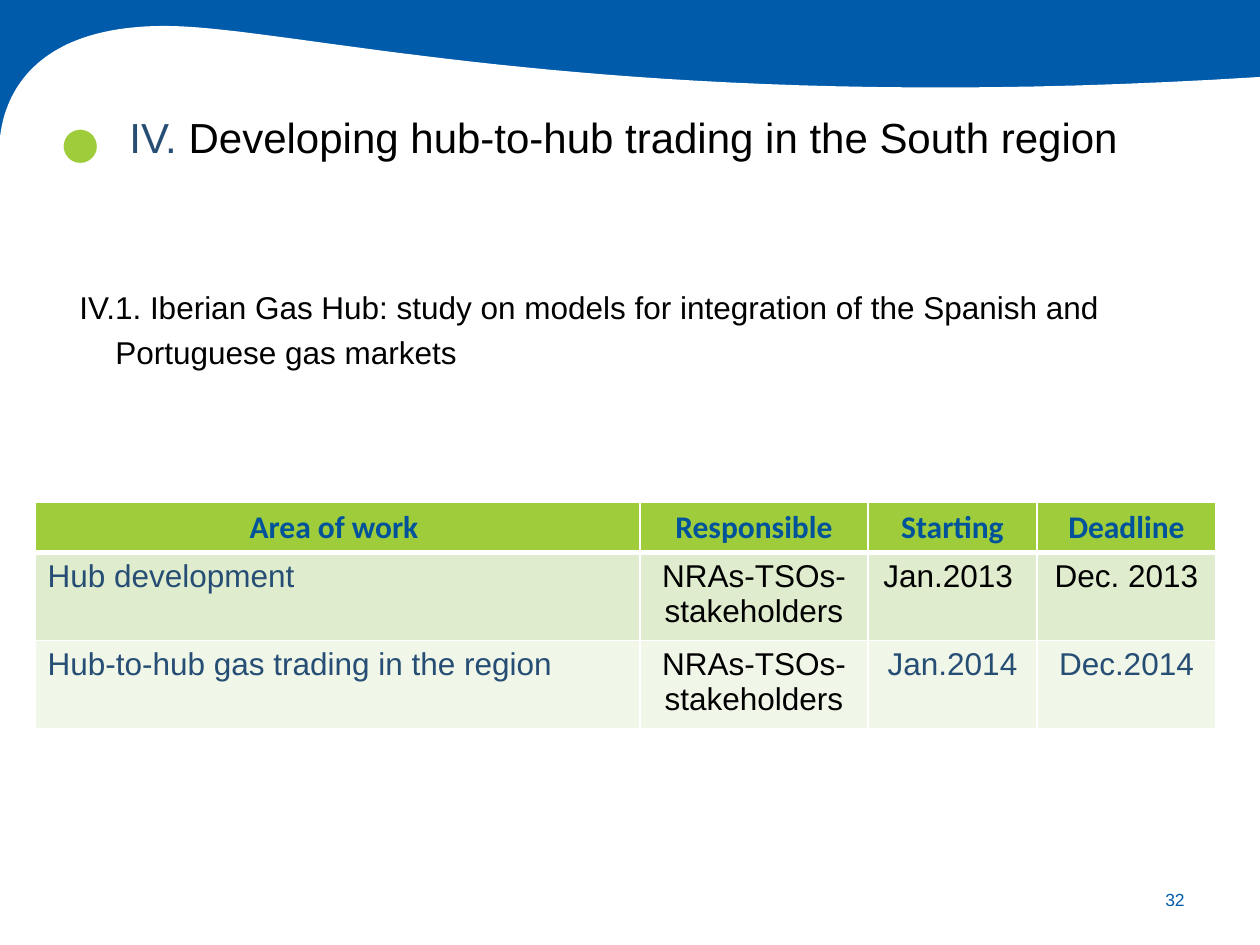
from lxml.etree import SubElement
from pptx import Presentation
from pptx.dml.color import RGBColor
from pptx.enum.shapes import MSO_SHAPE as Shape
from pptx.enum.text import MSO_ANCHOR as Anchor, PP_ALIGN as Align
from pptx.oxml.ns import qn
from pptx.util import Pt

EMU_PER_PX = 914400 / 126
SLIDE_SIZE = (1260, 945)

THEME = {
    "blue": "005BAB", "green": "9ECC3B", "navy": "264D74", "header": "00529B",
    "black": "000000", "white": "FFFFFF", "band": "DFECCE", "light": "F0F6E8",
    "body_font": "Arial", "header_font": "Calibri",
    "bullet": 44, "title": 24, "body": 18, "number": 10,
}

BANNER_BOX = (0, 0, 1260, 145)
WAVE_START = (1260, 77)
WAVE_CURVES = [
    [(617, 118), (295, 26), (165, 26)],
    [(29, 26), (4, 100), (0, 138)],
]
CURVE_STEPS = 40

TEXTS = [
    {"box": (1126, 875, 71, 50), "runs": [("32", "blue")], "size": "number",
     "anchor": Anchor.MIDDLE, "format": {"alignment": Align.RIGHT}},
    {"box": (45, 72, 69, 118), "runs": [("●", "green")], "size": "bullet",
     "anchor": Anchor.BOTTOM, "format": {"alignment": Align.CENTER}},
    {"box": (105, 105, 1103, 63), "size": "title", "indent": (11, 1),
     "runs": [("IV. ", "navy"), ("Developing hub-to-hub trading in the South region", "black")],
     "format": {"alignment": Align.JUSTIFY, "space_after": Pt(2)}},
    {"box": (54, 274, 1077, 110), "size": "body", "indent": (49, -36),
     "runs": [("IV.1. Iberian Gas Hub: study on models for integration of the "
               "Spanish and Portuguese gas markets", "black")],
     "format": {"line_spacing": 1.2, "space_after": Pt(2)}},
]

TABLE_ORIGIN = (35, 502)
COLUMN_WIDTHS = [605, 228, 169, 179]
TABLE_ROWS = [
    {"height": 50, "fill": "green", "colors": ["header"] * 4, "header": True,
     "cells": ["Area of work ", "Responsible", "Starting", "Deadline"]},
    {"height": 88, "fill": "band", "colors": ["navy", "black", "black", "black"], "header": False,
     "cells": ["Hub development", "NRAs-TSOs-stakeholders", "Jan.2013 ", "Dec. 2013"]},
    {"height": 88, "fill": "light", "colors": ["navy", "black", "navy", "navy"], "header": False,
     "cells": ["Hub-to-hub gas trading in the region", "NRAs-TSOs-stakeholders",
               "Jan.2014", "Dec.2014"]},
]


def px(value):
    return round(value * EMU_PER_PX)


def color(name):
    return RGBColor.from_string(THEME[name])


def apply(target, values):
    for name, value in values.items():
        setattr(target, name, value)


def paint(shape, color_name):
    shape.shadow.inherit = False
    shape.fill.solid()
    shape.fill.fore_color.rgb = color(color_name)
    shape.line.fill.background()


def add_run(paragraph, text, color_name, size, font="body_font", bold=False):
    run = paragraph.add_run()
    run.text = text
    apply(run.font, {"name": THEME[font], "size": Pt(THEME[size]), "bold": bold})
    run.font.color.rgb = color(color_name)


def curve_points(start, control_1, control_2, end):
    for step in range(1, CURVE_STEPS + 1):
        t = step / CURVE_STEPS
        weights = ((1 - t) ** 3, 3 * t * (1 - t) ** 2, 3 * t * t * (1 - t), t ** 3)
        yield tuple(
            px(sum(weight * value for weight, value in zip(weights, values)))
            for values in zip(start, control_1, control_2, end)
        )


def add_banner(slide):
    paint(slide.shapes.add_shape(Shape.RECTANGLE, *map(px, BANNER_BOX)), "blue")
    width, height = map(px, SLIDE_SIZE)
    points = []
    start = WAVE_START
    for curve in WAVE_CURVES:
        points.extend(curve_points(start, *curve))
        start = curve[-1]
    points.extend([(0, height), (width, height)])
    builder = slide.shapes.build_freeform(*map(px, WAVE_START))
    builder.add_line_segments(points, close=True)
    paint(builder.convert_to_shape(), "white")


def add_text(slide, item):
    frame = slide.shapes.add_textbox(*map(px, item["box"])).text_frame
    apply(frame, {"word_wrap": True, "vertical_anchor": item.get("anchor", Anchor.TOP)})
    paragraph = frame.paragraphs[0]
    apply(paragraph, item["format"])
    if "indent" in item:
        properties = paragraph._p.get_or_add_pPr()
        for name, value in zip(("marL", "indent"), item["indent"]):
            properties.set(name, str(px(value)))
    for text, color_name in item["runs"]:
        add_run(paragraph, text, color_name, item["size"])


def set_borders(cell, widths):
    properties = cell._tc.get_or_add_tcPr()
    for side, width in widths.items():
        line = SubElement(properties, qn(f"a:ln{side}"), w=str(Pt(width)))
        fill = SubElement(line, qn("a:solidFill"))
        SubElement(fill, qn("a:srgbClr"), val=THEME["white"])


def add_table(slide):
    size = (sum(COLUMN_WIDTHS), sum(row["height"] for row in TABLE_ROWS))
    table = slide.shapes.add_table(
        len(TABLE_ROWS), len(COLUMN_WIDTHS), *map(px, TABLE_ORIGIN + size)
    ).table
    apply(table, {"first_row": False, "horz_banding": False})
    for column, width in zip(table.columns, COLUMN_WIDTHS):
        column.width = px(width)
    for row_index, row in enumerate(TABLE_ROWS):
        table.rows[row_index].height = px(row["height"])
        is_header = row["header"]
        top = 3 if row_index == 1 else 1
        bottom = 3 if is_header else 1
        font = "header_font" if is_header else "body_font"
        for column_index, (text, color_name) in enumerate(zip(row["cells"], row["colors"])):
            cell = table.cell(row_index, column_index)
            set_borders(cell, {"L": 1, "R": 1, "T": top, "B": bottom})
            cell.fill.solid()
            cell.fill.fore_color.rgb = color(row["fill"])
            paragraph = cell.text_frame.paragraphs[0]
            centered = is_header or column_index > 0
            paragraph.alignment = Align.CENTER if centered else Align.LEFT
            add_run(paragraph, text, color_name, "body", font, is_header)


def main():
    presentation = Presentation()
    apply(presentation, dict(zip(("slide_width", "slide_height"), map(px, SLIDE_SIZE))))
    slide = presentation.slides.add_slide(presentation.slide_layouts[6])
    add_banner(slide)
    for item in TEXTS:
        add_text(slide, item)
    add_table(slide)
    presentation.save("out.pptx")


if __name__ == "__main__":
    main()
